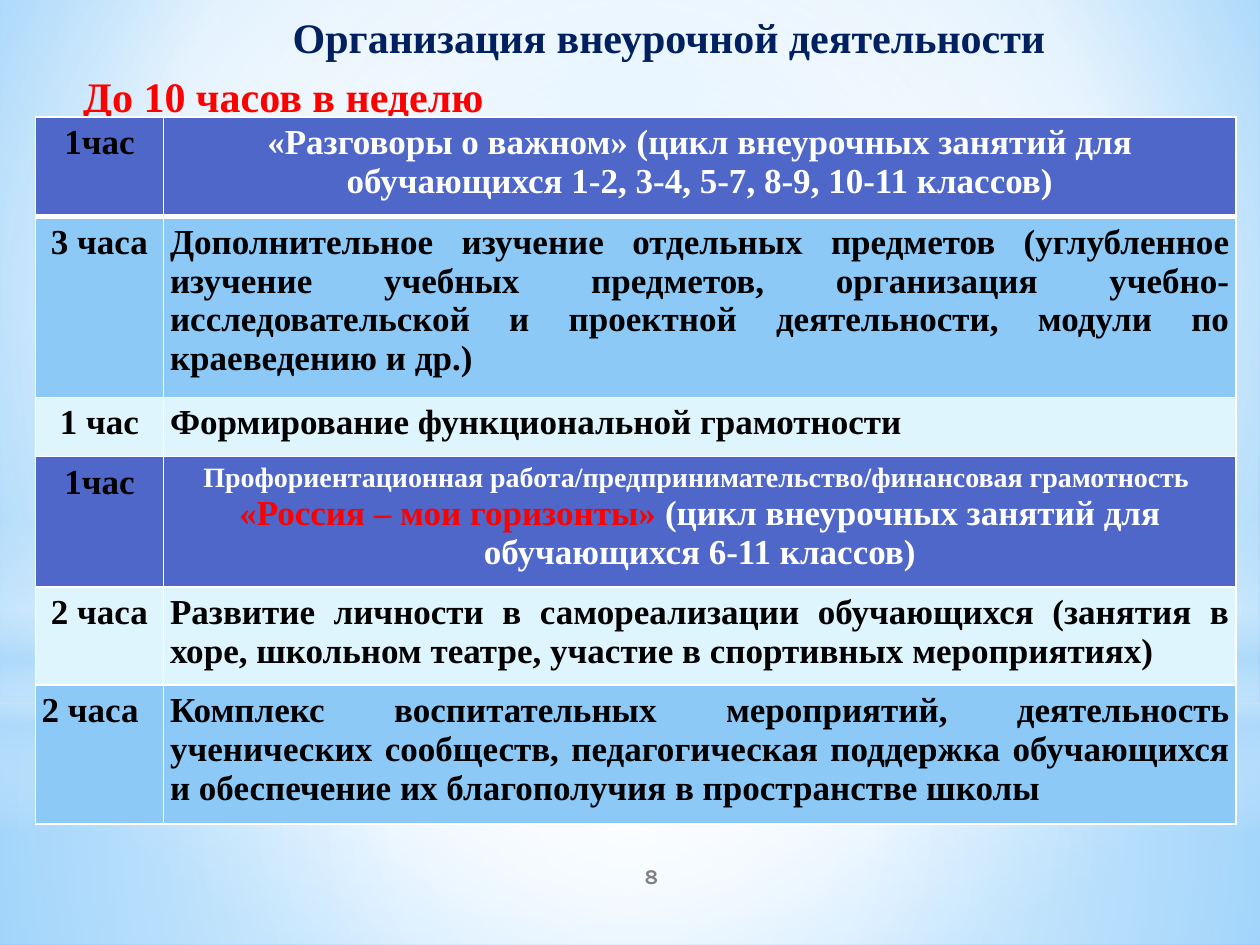
from dataclasses import dataclass

from pptx import Presentation
from pptx.dml.color import RGBColor
from pptx.enum.shapes import MSO_SHAPE
from pptx.enum.text import MSO_ANCHOR, PP_ALIGN
from pptx.oxml import parse_xml
from pptx.oxml.ns import nsdecls, qn
from pptx.util import Inches, Pt


@dataclass(frozen=True)
class Theme:
    font: str = "Times New Roman"
    number_font: str = "Karla"
    white: str = "FFFFFF"
    black: str = "000000"
    red: str = "FF0000"
    navy: str = "002060"
    grey: str = "808080"
    sky: str = "B4DCFA"
    header: str = "4E67C8"
    band: str = "8CC9F7"
    pale: str = "DFF5FD"
    heading_size: int = 24
    table_size: int = 20
    small_size: int = 16
    number_size: int = 12


THEME = Theme()
CENTER, JUSTIFY = PP_ALIGN.CENTER, PP_ALIGN.JUSTIFY
HORIZONTAL = '<a:lin ang="5400000" scaled="0"/>'


def radial(left=50, top=50, right=50, bottom=50):
    return (
        '<a:path path="circle"><a:fillToRect '
        f'l="{left * 1000}" t="{top * 1000}" r="{right * 1000}" b="{bottom * 1000}"/></a:path>'
    )


def set_gradient(element, stops, direction):
    stop_xml = "".join(
        f'<a:gs pos="{position * 1000}"><a:srgbClr val="{color}">'
        f'<a:alpha val="{alpha * 1000}"/></a:srgbClr></a:gs>'
        for position, color, alpha in stops
    )
    gradient = parse_xml(
        f'<a:gradFill {nsdecls("a")} rotWithShape="1"><a:gsLst>{stop_xml}</a:gsLst>'
        f"{direction}</a:gradFill>"
    )
    solid = element.find(".//" + qn("a:solidFill"))
    solid.getparent().replace(solid, gradient)


def style_font(font, size, color, name=THEME.font):
    font.name = name
    font.size = Pt(size)
    font.bold = True
    font.color.rgb = RGBColor.from_string(color)


def add_backdrop(page):
    white, sky = THEME.white, THEME.sky
    page.background.fill.solid()
    set_gradient(
        page._element,
        [(0, "9ED5FF", 100), (60, white, 100), (100, "5BB9FF", 100)],
        radial(20, 10, 20, 60),
    )
    layers = [
        (MSO_SHAPE.RECTANGLE, 5.58, 1.92,
         [(0, white, 91), (37, white, 76), (100, sky, 79)], radial()),
        (MSO_SHAPE.RECTANGLE, 0, 5.58,
         [(0, white, 89), (48, white, 62), (100, sky, 79)], radial()),
        (MSO_SHAPE.RECTANGLE, 4.12, 2.5,
         [(0, white, 0), (29, white, 30), (45, sky, 40), (55, white, 26),
          (65, sky, 60), (100, white, 0)], HORIZONTAL),
        (MSO_SHAPE.OVAL, 1.75, 5.58, [(0, white, 100), (56, white, 0)], radial()),
    ]
    for kind, top, height, stops, direction in layers:
        layer = page.shapes.add_shape(kind, 0, Inches(top), Inches(10), Inches(height))
        layer.shadow.inherit = False
        layer.line.fill.background()
        layer.fill.solid()
        set_gradient(layer._element, stops, direction)


def add_label(page, bounds, text, size, color, align, name=THEME.font, anchor=MSO_ANCHOR.TOP):
    box = page.shapes.add_textbox(*map(Inches, bounds))
    frame = box.text_frame
    frame.word_wrap = True
    frame.vertical_anchor = anchor
    para = frame.paragraphs[0]
    para.text = text
    para.alignment = align
    style_font(para.font, size, color, name)
    return box


def set_borders(cell, widths):
    properties = cell._tc.get_or_add_tcPr()
    for index, (side, width) in enumerate(zip("LRTB", widths)):
        border = parse_xml(
            f'<a:ln{side} {nsdecls("a")} w="{Pt(width)}"><a:solidFill>'
            f'<a:srgbClr val="{THEME.white}"/></a:solidFill></a:ln{side}>'
        )
        properties.insert(index, border)


def fill_cell(cell, paragraphs, align, fill, widths):
    cell.margin_left = cell.margin_right = Inches(0.05)
    cell.margin_top = cell.margin_bottom = Inches(0.05)
    cell.fill.solid()
    cell.fill.fore_color.rgb = RGBColor.from_string(fill)
    set_borders(cell, widths)
    for index, spans in enumerate(paragraphs):
        frame = cell.text_frame
        para = frame.add_paragraph() if index else frame.paragraphs[0]
        para.alignment = align
        for text, color, size in spans:
            span = para.add_run()
            span.text = text
            style_font(span.font, size, color)


def plain(text, color=THEME.black):
    return [[(text, color, THEME.table_size)]]


def add_hours_table(page, left, top, width):
    career = [
        [("Профориентационная работа/предпринимательство/финансовая грамотность ",
          THEME.white, THEME.small_size)],
        [("«Россия – мои горизонты» ", THEME.red, THEME.table_size),
         ("(цикл внеурочных занятий для обучающихся 6-11 классов)",
          THEME.white, THEME.table_size)],
    ]
    rows = [
        (0.79, THEME.header, "1час", CENTER, CENTER, plain(
            "«Разговоры о важном» (цикл внеурочных занятий для обучающихся "
            "1-2, 3-4, 5-7, 8-9, 10-11 классов)", THEME.white)),
        (1.43, THEME.band, "3 часа", CENTER, JUSTIFY, plain(
            "Дополнительное изучение отдельных предметов (углубленное изучение "
            "учебных предметов, организация учебно-исследовательской и проектной "
            "деятельности, модули по краеведению и др.)")),
        (0.47, THEME.pale, "1 час", CENTER, JUSTIFY, plain(
            "Формирование функциональной грамотности")),
        (1.03, THEME.header, "1час", CENTER, CENTER, career),
        (0.78, THEME.pale, "2 часа", CENTER, JUSTIFY, plain(
            "Развитие личности в самореализации обучающихся (занятия в хоре, "
            "школьном театре, участие в спортивных мероприятиях)")),
        (1.1, THEME.band, "2 часа", JUSTIFY, JUSTIFY, plain(
            "Комплекс воспитательных мероприятий, деятельность ученических сообществ, "
            "педагогическая поддержка обучающихся и обеспечение их благополучия "
            "в пространстве школы")),
    ]
    hours_width = 1.02
    height = sum(row[0] for row in rows)
    table = page.shapes.add_table(
        len(rows), 2, Inches(left), Inches(top), Inches(width), Inches(height)
    ).table
    table.horz_banding = False
    table.columns[0].width = Inches(hours_width)
    table.columns[1].width = Inches(width - hours_width)
    for index, (height, fill, hours, hours_align, align, activity) in enumerate(rows):
        table.rows[index].height = Inches(height)
        widths = (1, 1, 3 if index == 1 else 1, 3 if index == 0 else 1)
        fill_cell(table.cell(index, 0), plain(hours), hours_align, fill, widths)
        fill_cell(table.cell(index, 1), activity, align, fill, widths)


def main():
    deck = Presentation()
    deck.slide_width, deck.slide_height = Inches(10), Inches(7.5)
    page = deck.slides.add_slide(deck.slide_layouts[6])
    add_backdrop(page)
    add_label(page, (4.17, 6.75, 2, 0.4), "8", THEME.number_size, THEME.grey,
              CENTER, THEME.number_font, MSO_ANCHOR.MIDDLE)
    limit = add_label(page, (0.51, 0.51, 9.21, 6), "До 10 часов в неделю",
                      THEME.heading_size, THEME.red, JUSTIFY)
    limit.text_frame.margin_left = Inches(0.15)
    add_label(page, (1.61, 0.04, 7.4, 0.5), "Организация внеурочной деятельности",
              THEME.heading_size, THEME.navy, CENTER)
    add_hours_table(page, 0.28, 0.93, 9.53)
    deck.save("out.pptx")


if __name__ == "__main__":
    main()
